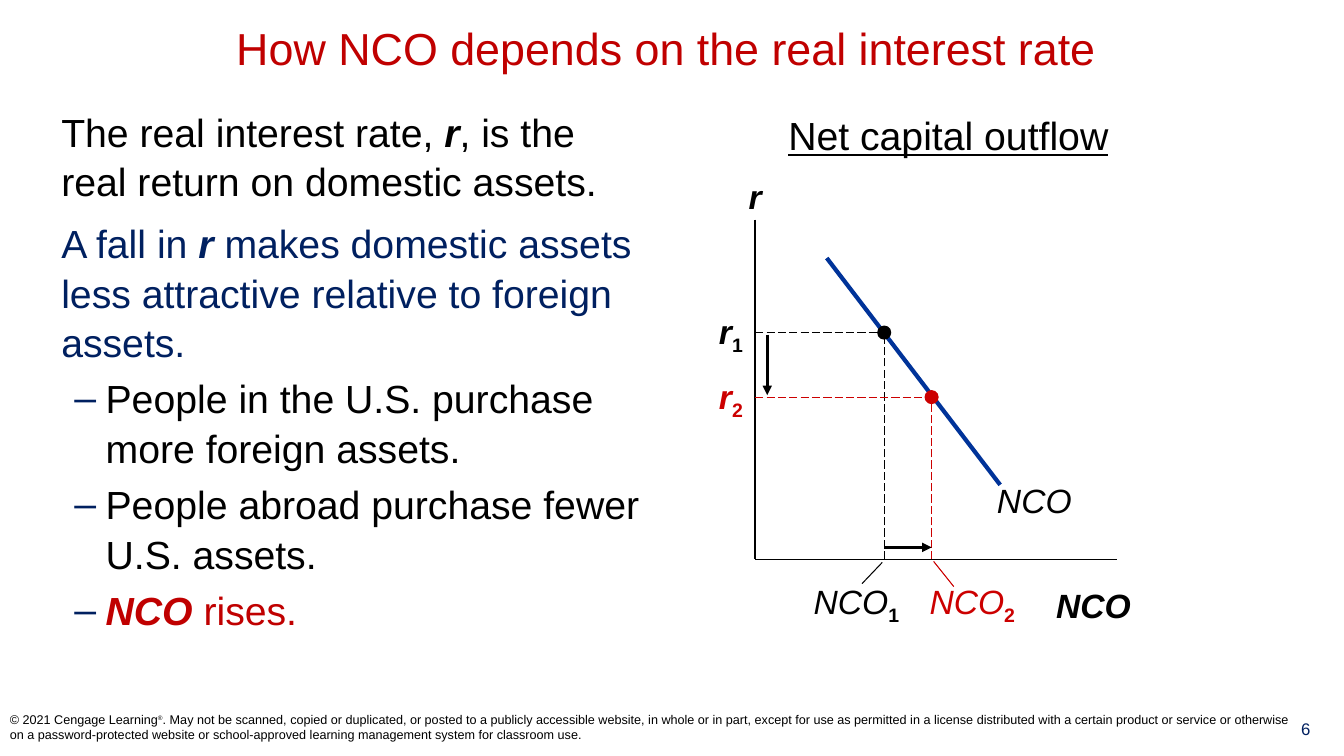
from dataclasses import dataclass
from typing import Optional, Sequence

from lxml.etree import SubElement
from pptx import Presentation
from pptx.dml.color import RGBColor
from pptx.enum.dml import MSO_LINE
from pptx.enum.shapes import MSO_CONNECTOR, MSO_SHAPE
from pptx.enum.text import MSO_ANCHOR, PP_ALIGN
from pptx.oxml.ns import qn
from pptx.util import Inches, Pt

BLACK = RGBColor(0x00, 0x00, 0x00)
NAVY = RGBColor(0x00, 0x20, 0x60)
BLUE = RGBColor(0x00, 0x33, 0x99)
CRIMSON = RGBColor(0xC0, 0x00, 0x00)
RED = RGBColor(0xCC, 0x00, 0x00)
FONT = "Arial"
SLIDE_WIDTH, SLIDE_HEIGHT = Inches(13.33), Inches(7.5)
COLUMN = SLIDE_WIDTH / 133.3
ROW = SLIDE_HEIGHT / 75
AXIS_COLUMN, AXIS_ROW = 74.9, 55.5
DOT = 1.4


@dataclass(frozen=True)
class Run:
    text: str
    bold: bool = False
    italic: bool = False
    underline: bool = False
    baseline: int = 0
    size: Optional[float] = None


@dataclass(frozen=True)
class Paragraph:
    runs: Sequence[Run]
    color: RGBColor = BLACK
    space_before: float = 0
    bullet: bool = False


@dataclass(frozen=True)
class Box:
    column: float
    row: float
    columns: float
    rows: float


@dataclass(frozen=True)
class Equilibrium:
    number: str
    column: float
    row: float
    color: RGBColor
    label_column: float
    leader: tuple[float, float, float, float]


EQUILIBRIA = [
    Equilibrium("1", 87.7, 33, BLACK, 80.7, (85.5, 57.9, 87.5, 55.8)),
    Equilibrium("2", 92.4, 39.4, RED, 92.2, (92.6, 55.7, 94.6, 58.2)),
]

BODY = [
    Paragraph([Run("The real interest rate, "), Run("r", bold=True, italic=True),
               Run(", is the real return on domestic assets.")]),
    Paragraph([Run("A fall in "), Run("r", bold=True, italic=True),
               Run(" makes domestic assets less attractive relative to foreign assets.")],
              color=NAVY, space_before=9),
    Paragraph([Run("People in the U.S. purchase more foreign assets.")],
              space_before=5, bullet=True),
    Paragraph([Run("People abroad purchase fewer U.S. assets.")],
              space_before=5, bullet=True),
    Paragraph([Run("NCO", bold=True, italic=True), Run(" rises.")],
              color=CRIMSON, space_before=5, bullet=True),
]

COPYRIGHT = [
    Run("© 2021 Cengage Learning"),
    Run("®", baseline=30, size=8),
    Run(". May not be scanned, copied or duplicated, or posted to a publicly accessible "
        "website, in whole or in part, except for use as permitted in a license distributed "
        "with a certain product or service or otherwise on a password-protected website or "
        "school-approved learning management system for classroom use."),
]


def across(columns: float) -> int:
    return round(columns * COLUMN)


def down(rows: float) -> int:
    return round(rows * ROW)


def add_bullet(paragraph) -> None:
    properties = paragraph._p.get_or_add_pPr()
    properties.set("marL", str(Inches(0.44)))
    properties.set("indent", str(Inches(-0.31)))
    color = SubElement(properties, qn("a:buClr"))
    SubElement(color, qn("a:srgbClr")).set("val", str(NAVY))
    SubElement(properties, qn("a:buFont")).set("typeface", FONT)
    SubElement(properties, qn("a:buChar")).set("char", "–")


def add_text(slide, box: Box, paragraphs: Sequence[Paragraph], *, size: float,
             alignment: PP_ALIGN = PP_ALIGN.LEFT, anchor: MSO_ANCHOR = MSO_ANCHOR.TOP,
             line_spacing: float = 1.0, inset: bool = True) -> None:
    shape = slide.shapes.add_textbox(across(box.column), down(box.row),
                                     across(box.columns), down(box.rows))
    frame = shape.text_frame
    frame.word_wrap = True
    frame.vertical_anchor = anchor
    if not inset:
        frame.margin_left = frame.margin_right = 0
        frame.margin_top = frame.margin_bottom = 0
    for index, content in enumerate(paragraphs):
        paragraph = frame.add_paragraph() if index else frame.paragraphs[0]
        paragraph.alignment = alignment
        paragraph.line_spacing = line_spacing
        paragraph.space_before = Pt(content.space_before)
        if content.bullet:
            add_bullet(paragraph)
        for part in content.runs:
            run = paragraph.add_run()
            run.text = part.text
            run.font.name = FONT
            run.font.size = Pt(part.size or size)
            run.font.color.rgb = content.color
            run.font.bold = part.bold
            run.font.italic = part.italic
            run.font.underline = part.underline
            if part.baseline:
                run.font._element.set("baseline", str(part.baseline * 1000))


def add_line(slide, start: tuple[float, float], end: tuple[float, float], *,
             color: RGBColor = BLACK, width: float = 0.75,
             dashed: bool = False, arrow: bool = False) -> None:
    connector = slide.shapes.add_connector(
        MSO_CONNECTOR.STRAIGHT, across(start[0]), down(start[1]), across(end[0]), down(end[1]))
    connector.line.color.rgb = color
    connector.line.width = Pt(width)
    if dashed:
        connector.line.dash_style = MSO_LINE.LONG_DASH
    if arrow:
        SubElement(connector.line._get_or_add_ln(), qn("a:tailEnd")).set("type", "triangle")
    SubElement(connector._element.spPr, qn("a:effectLst"))


def add_equilibrium(slide, point: Equilibrium) -> None:
    center = (point.column, point.row)
    for foot in ((AXIS_COLUMN, point.row), (point.column, AXIS_ROW)):
        add_line(slide, foot, center, color=point.color, dashed=True)
    add_line(slide, point.leader[:2], point.leader[2:], color=point.color)
    dot = slide.shapes.add_shape(
        MSO_SHAPE.OVAL, across(point.column - DOT / 2), down(point.row - DOT / 2),
        across(DOT), down(DOT))
    dot.shadow.inherit = False
    dot.fill.solid()
    dot.fill.fore_color.rgb = point.color
    dot.line.fill.background()
    subscript = Run(point.number, bold=True, baseline=-25)
    add_text(slide, Box(70.8, point.row - 2.15, 3.4, 4),
             [Paragraph([Run("r", bold=True, italic=True), subscript], color=point.color)],
             size=24, alignment=PP_ALIGN.CENTER, inset=False)
    add_text(slide, Box(point.label_column, 57.6, 9.4, 4),
             [Paragraph([Run("NCO", italic=True), subscript], color=point.color)],
             size=24, inset=False)


def add_graph(slide) -> None:
    add_text(slide, Box(75.8, 10.6, 36.5, 5.7),
             [Paragraph([Run("Net capital outflow", underline=True)])],
             size=28, alignment=PP_ALIGN.CENTER)
    add_line(slide, (AXIS_COLUMN, 21.8), (AXIS_COLUMN, AXIS_ROW), width=1)
    add_line(slide, (AXIS_COLUMN, AXIS_ROW), (110.8, AXIS_ROW), width=1)
    for box, name in ((Box(73.1, 17, 3.6, 5), "r"), (Box(103.5, 57.5, 9.9, 5), "NCO")):
        add_text(slide, box, [Paragraph([Run(name, bold=True, italic=True)])],
                 size=24, alignment=PP_ALIGN.CENTER)
    add_line(slide, (82, 25.6), (99.2, 48.1), color=BLUE, width=3)
    add_text(slide, Box(97.9, 47.1, 11, 5), [Paragraph([Run("NCO", italic=True)])], size=24)
    for point in EQUILIBRIA:
        add_equilibrium(slide, point)
    first, second = EQUILIBRIA
    add_line(slide, (76.1, first.row + 0.2), (76.1, second.row - 0.2), width=2.25, arrow=True)
    add_line(slide, (first.column, 54.3), (second.column, 54.3), width=2.25, arrow=True)


def main() -> None:
    presentation = Presentation()
    presentation.slide_width, presentation.slide_height = SLIDE_WIDTH, SLIDE_HEIGHT
    slide = presentation.slides.add_slide(presentation.slide_layouts[6])
    add_text(slide, Box(1.1, 1.1, 130, 7.2),
             [Paragraph([Run("How NCO depends on the real interest rate")], color=CRIMSON)],
             size=32, alignment=PP_ALIGN.CENTER, anchor=MSO_ANCHOR.MIDDLE)
    add_text(slide, Box(5.1, 10, 59.4, 60.5), BODY, size=28, line_spacing=1.05)
    add_graph(slide)
    add_text(slide, Box(125.7, 70.8, 7.6, 4.1), [Paragraph([Run("6")], color=NAVY)],
             size=12, alignment=PP_ALIGN.CENTER)
    add_text(slide, Box(0, 69.2, 130, 5.8), [Paragraph(COPYRIGHT)],
             size=9, anchor=MSO_ANCHOR.MIDDLE)
    presentation.save("out.pptx")


if __name__ == "__main__":
    main()
